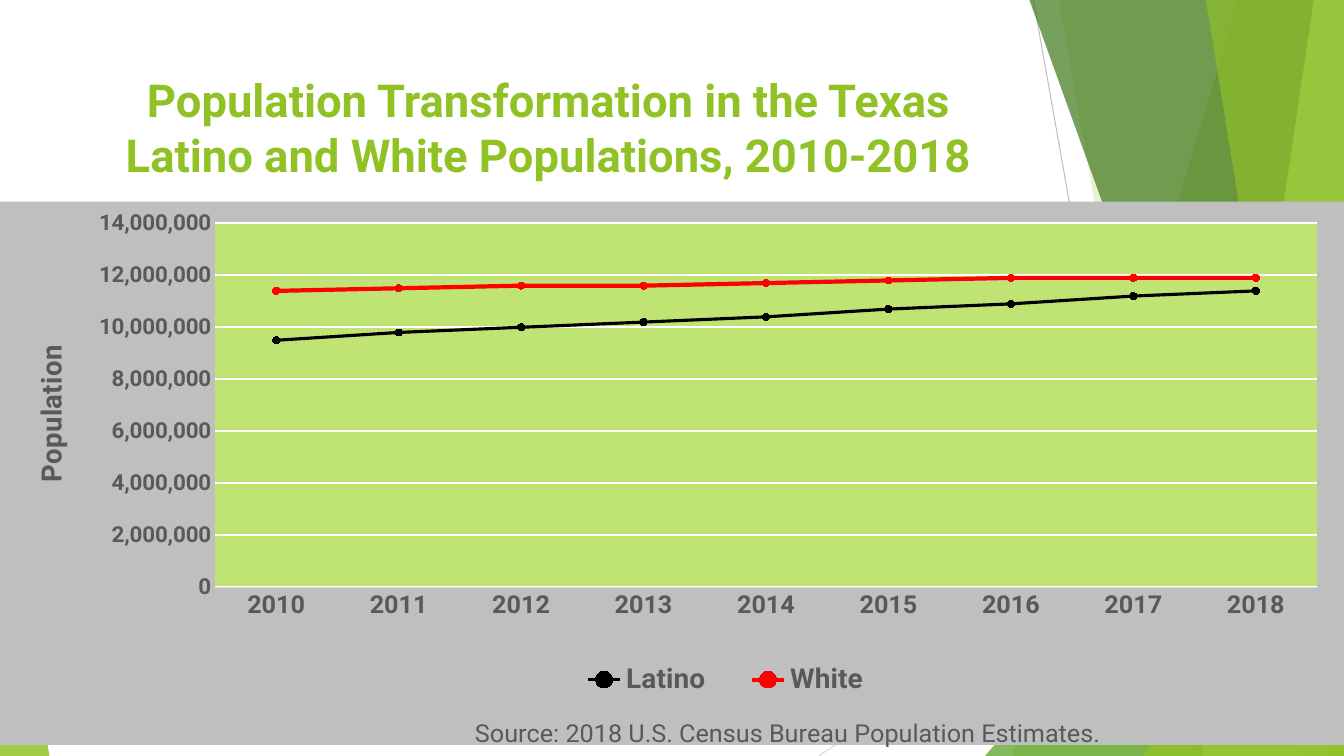
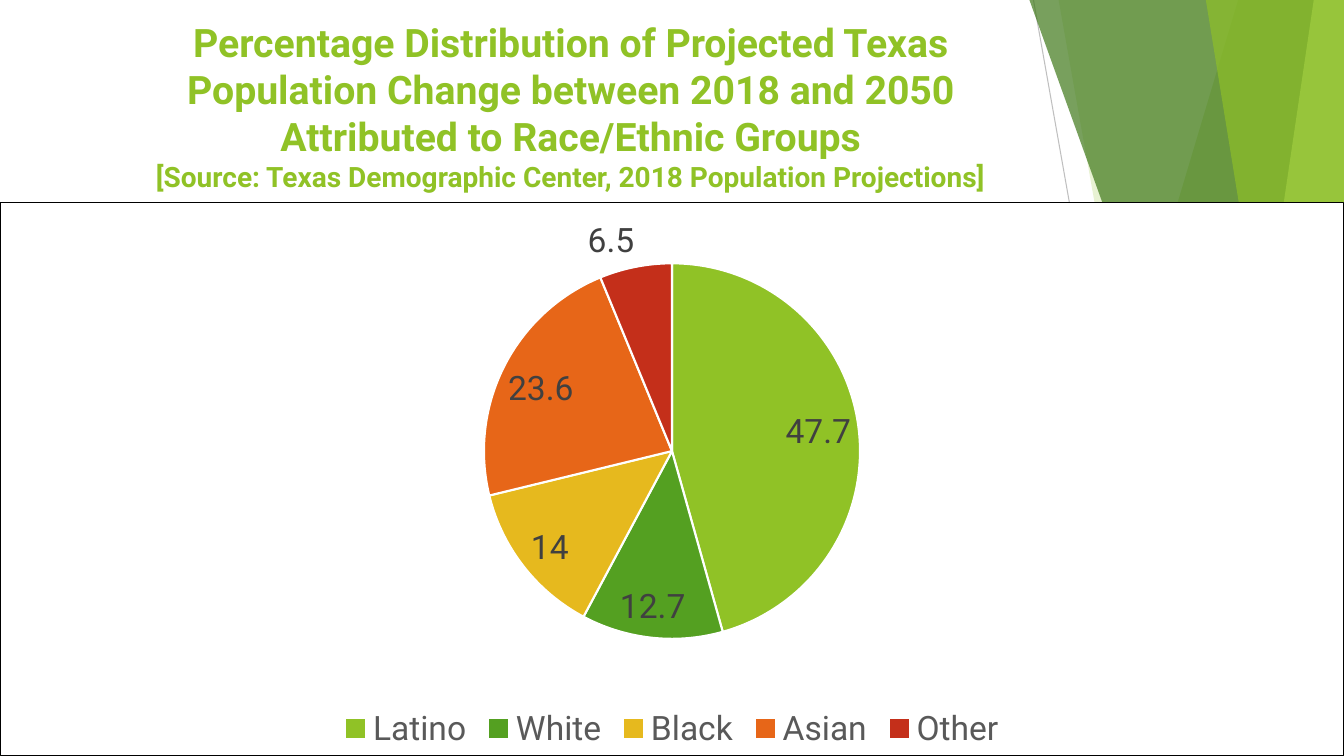
from dataclasses import dataclass

from lxml.etree import SubElement
from pptx import Presentation
from pptx.chart.data import CategoryChartData
from pptx.dml.color import RGBColor
from pptx.enum.chart import (XL_CHART_TYPE, XL_LABEL_POSITION,
                             XL_LEGEND_POSITION, XL_MARKER_STYLE,
                             XL_TICK_MARK)
from pptx.enum.shapes import MSO_CONNECTOR, MSO_SHAPE
from pptx.enum.text import MSO_ANCHOR, PP_ALIGN
from pptx.oxml import parse_xml
from pptx.oxml.ns import nsdecls, qn
from pptx.util import Pt

PX = 9144
WIDE, HIGH = 1333, 750


@dataclass(frozen=True)
class Theme:
    font: str = "Roboto"
    lime: str = "90C226"
    green: str = "54A021"
    moss: str = "3F7819"
    pale: str = "C0E474"
    gold: str = "E6B91E"
    orange: str = "E76618"
    brick: str = "C42F1A"
    red: str = "FF0000"
    black: str = "000000"
    white: str = "FFFFFF"
    panel: str = "BFBFBF"
    rule: str = "D9D9D9"
    gray: str = "595959"
    dark: str = "404040"
    head: float = 32.4
    subhead: float = 28
    large: float = 24
    note: float = 20
    label: float = 18
    small: float = 16


T = Theme()
SLAB, PEAK = "slab", "peak"
DECOR = [
    (SLAB, (1228, 1004), T.lime, 30),
    (SLAB, (1050, 1183), T.lime, 20),
    (PEAK, (977, 333, 356, 1), T.green, 72),
    (SLAB, (1021, 1291), T.moss, 70),
    (SLAB, (1303, 1192), T.pale, 70),
    (SLAB, (1196, 1318), T.lime, 65),
    (PEAK, (1134, 393, 199, 1), T.lime, 80),
    (PEAK, (0, 439, 49, 0), T.lime, 85),
]


def rgb(color):
    return RGBColor.from_string(color)


def px(*nums):
    return [n * PX for n in nums]


def style(font, size, color, bold=False):
    font.name = T.font
    font.size = Pt(size)
    font.bold = bold
    font.color.rgb = rgb(color)


def stroke(line, color, width):
    line.color.rgb = rgb(color)
    line.width = Pt(width)


def tint(shape, color, alpha):
    shape.shadow.inherit = False
    shape.line.fill.background()
    shape.fill.solid()
    shape.fill.fore_color.rgb = rgb(color)
    node = shape.element.spPr.find(".//" + qn("a:srgbClr"))
    SubElement(node, qn("a:alpha")).set("val", str(alpha * 1000))


def add_line(slide, start, end, color):
    line = slide.shapes.add_connector(MSO_CONNECTOR.STRAIGHT,
                                      *px(*start, *end))
    stroke(line.line, color, 0.75)
    SubElement(line.element.spPr, qn("a:effectLst"))


def add_slab(slide, top, foot):
    pen = slide.shapes.build_freeform(top, 0, scale=PX)
    pen.add_line_segments([(WIDE, 0), (WIDE, HIGH), (foot, HIGH)], close=True)
    return pen.convert_to_shape()


def add_peak(slide, left, top, width, tip):
    peak = slide.shapes.add_shape(MSO_SHAPE.ISOSCELES_TRIANGLE,
                                  *px(left, top, width, HIGH - top))
    peak.adjustments[0] = tip
    return peak


def add_decor(slide):
    add_line(slide, (1025, 0), (1158, HIGH), T.panel)
    add_line(slide, (WIDE, 403), (812, HIGH), T.rule)
    for kind, form, color, alpha in DECOR:
        draw = add_slab if kind == SLAB else add_peak
        tint(draw(slide, *form), color, alpha)


def add_title(slide, left, top, lines):
    frame = slide.shapes.add_textbox(*px(left, top, 940, 144)).text_frame
    frame.word_wrap = True
    frame.vertical_anchor = MSO_ANCHOR.TOP
    para = frame.paragraphs[0]
    para.alignment = PP_ALIGN.CENTER
    for i, (text, size) in enumerate(lines):
        if i:
            para.add_line_break()
        run = para.add_run()
        run.text = text
        style(run.font, size, T.lime, True)


def place(node, index, inner=False, **spots):
    for old in node.findall(qn("c:layout")):
        node.remove(old)
    layout = parse_xml(f"<c:layout {nsdecls('c')}><c:manualLayout/></c:layout>")
    tags = {"layoutTarget": "inner"} if inner else {}
    tags.update(xMode="edge", yMode="edge", **spots)
    for tag, val in tags.items():
        SubElement(layout[0], qn("c:" + tag)).set("val", str(val))
    node.insert(index, layout)


def props(fill, border=None):
    paint = '<a:solidFill><a:srgbClr val="{}"/></a:solidFill>'
    edge = paint.format(border) if border else "<a:noFill/>"
    return parse_xml(f"<c:spPr {nsdecls('c', 'a')}>{paint.format(fill)}"
                     f'<a:ln w="{Pt(0.75)}">{edge}</a:ln></c:spPr>')


def add_chart(slide, kind, names, series, size, bold, fill, border=None):
    data = CategoryChartData()
    data.categories = names
    for name, vals in series:
        data.add_series(name, vals)
    chart = slide.shapes.add_chart(kind, *px(0, 200, WIDE, 550), data).chart
    style(chart.font, size, T.black)
    chart.has_title = False
    chart.has_legend = True
    chart.legend.position = XL_LEGEND_POSITION.BOTTOM
    chart.legend.include_in_layout = False
    style(chart.legend.font, size, T.gray, bold)
    root = chart.element
    body = root.find(qn("c:chart"))
    if root.find(qn("c:roundedCorners")) is None:
        body.addprevious(parse_xml(
            f'<c:roundedCorners {nsdecls("c")} val="0"/>'))
    body.addnext(props(fill, border))
    return chart


def name_axis(axis, text, size, bold, x, y, turn=0):
    axis.has_title = True
    title = axis.axis_title
    run = title.text_frame.paragraphs[0].add_run()
    run.text = text
    style(run.font, size, T.gray, bold)
    box = title.element.find(".//" + qn("a:bodyPr"))
    box.set("rot", str(turn * 60000))
    box.set("vert", "horz")
    place(title.element, 1, x=x, y=y)


def set_axes(chart):
    years, count = chart.category_axis, chart.value_axis
    for axis, size in ((years, T.label), (count, T.small)):
        axis.major_tick_mark = axis.minor_tick_mark = XL_TICK_MARK.NONE
        style(axis.tick_labels.font, size, T.gray, True)
    stroke(years.format.line, T.rule, 0.75)
    count.format.line.fill.background()
    count.minimum_scale, count.maximum_scale = 0, 14000000
    count.major_unit = 2000000
    count.tick_labels.number_format = "#,##0"
    count.tick_labels.number_format_is_linked = False
    stroke(count.major_gridlines.format.line, T.white, 1.25)
    name_axis(years, "Source: 2018 U.S. Census Bureau Population Estimates.",
              T.label, False, 0.35, 0.94)
    name_axis(count, "Population", T.note, True, 0.02, 0.26, -90)


def add_trend(slide):
    series = [
        ("Latino", [9500000, 9800000, 10000000, 10200000, 10400000,
                    10700000, 10900000, 11200000, 11400000]),
        ("White", [11400000, 11500000, 11600000, 11600000, 11700000,
                   11800000, 11900000, 11900000, 11900000]),
    ]
    years = [str(year) for year in range(2010, 2019)]
    chart = add_chart(slide, XL_CHART_TYPE.LINE_MARKERS, years, series,
                      T.note, True, T.panel)
    set_axes(chart)
    plot = chart.plots[0]
    plot.vary_by_categories = False
    looks = ((T.black, 2.25), (T.red, 3))
    for item, (color, width) in zip(plot.series, looks):
        item.smooth = False
        stroke(item.format.line, color, width)
        mark = item.marker
        mark.style = XL_MARKER_STYLE.CIRCLE
        mark.size = 5
        mark.format.fill.solid()
        mark.format.fill.fore_color.rgb = rgb(color)
        stroke(mark.format.line, color, 0.75)
    area = chart.element.find(".//" + qn("c:plotArea"))
    area.append(props(T.pale))
    place(area, 0, True, x=0.16, y=0.04, w=0.82, h=0.67)
    place(chart.element.find(".//" + qn("c:legend")), 1,
          x=0.41, y=0.84, w=0.26, h=0.08)


def add_pie(slide):
    names = ["Latino", "White", "Black", "Asian", "Other"]
    chart = add_chart(slide, XL_CHART_TYPE.PIE, names,
                      [("Series 1", [47.7, 12.7, 14, 23.6, 6.5])],
                      T.large, False, T.white, T.black)
    plot = chart.plots[0]
    plot.vary_by_categories = True
    colors = (T.lime, T.green, T.gold, T.orange, T.brick)
    for i, color in enumerate(colors):
        form = plot.series[0].points[i].format
        form.fill.solid()
        form.fill.fore_color.rgb = rgb(color)
        stroke(form.line, T.white, 1.5)
    plot.has_data_labels = True
    labels = plot.data_labels
    labels.show_value = True
    labels.show_percentage = False
    labels.position = XL_LABEL_POSITION.BEST_FIT
    style(labels.font, T.large, T.dark)
    place(chart.element.find(".//" + qn("c:plotArea")), 0, True,
          x=0.36, y=0.11, w=0.28, h=0.68)


def add_page(deck, left, top, lines, draw):
    slide = deck.slides.add_slide(deck.slide_layouts[6])
    add_decor(slide)
    add_title(slide, left, top, lines)
    draw(slide)


def main():
    deck = Presentation()
    deck.slide_width, deck.slide_height = px(WIDE, HIGH)
    add_page(deck, 74, 67, [
        ("Population Transformation in the Texas Latino and White "
         "Populations, 2010-2018", T.head),
    ], add_trend)
    add_page(deck, 96, 13, [
        ("Percentage Distribution of Projected Texas Population Change "
         "between 2018 and 2050 Attributed to Race/Ethnic Groups", T.subhead),
        ("[Source: Texas Demographic Center, 2018 Population Projections]",
         T.note),
    ], add_pie)
    deck.save("out.pptx")


if __name__ == "__main__":
    main()
